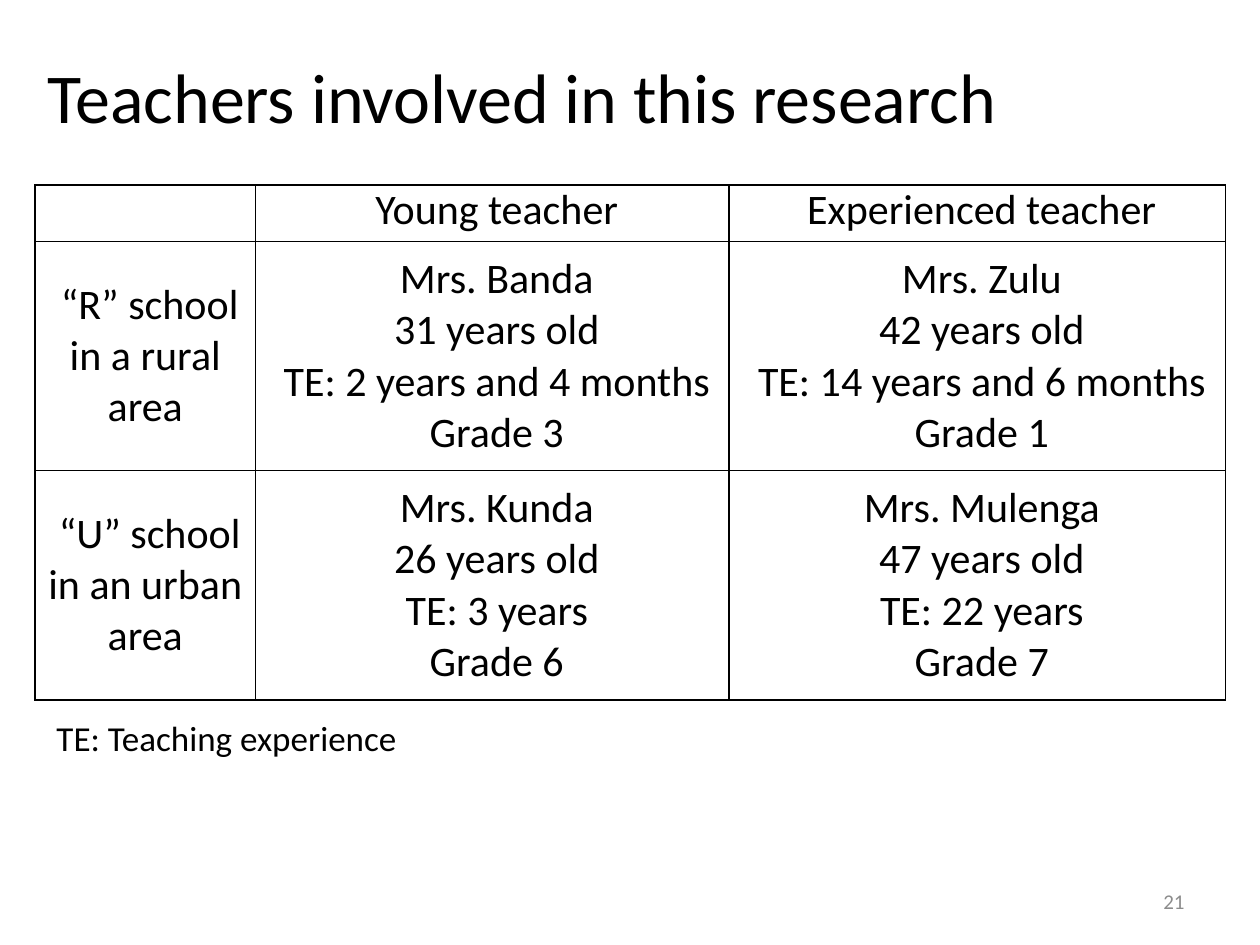
from lxml.etree import SubElement
from pptx import Presentation
from pptx.dml.color import RGBColor
from pptx.enum.text import MSO_ANCHOR as Anchor, PP_ALIGN as Align
from pptx.oxml.ns import qn
from pptx.util import Pt

BLACK, GREY = "000000", "8C8C8C"
COLUMN_WIDTHS = [126, 270.7, 283.7]
ROW_HEIGHTS = [32.4, 131, 131]
TEACHERS = [
    ["", "Young teacher", "Experienced teacher"],
    ["“R” school in a rural area",
     "Mrs. Banda\n31 years old\nTE: 2 years and 4 months\nGrade 3",
     "Mrs. Zulu\n42 years old\nTE: 14 years and 6 months\nGrade 1"],
    ["“U” school in an urban area",
     "Mrs. Kunda\n26 years old\nTE: 3 years\nGrade 6",
     "Mrs. Mulenga\n47 years old\nTE: 22 years\nGrade 7"],
]


def rgb(color):
    return RGBColor.from_string(color)


def format_paragraph(p, size, color=BLACK, align=Align.LEFT):
    p.alignment = align
    p.font.name = "Calibri"
    p.font.size = Pt(size)
    p.font.color.rgb = rgb(color)


def add_title(slide, text, left, top, width, height):
    sp = slide.shapes.title
    sp.left, sp.top, sp.width, sp.height = map(Pt, (left, top, width, height))
    tf = sp.text_frame
    tf.text = text
    tf.vertical_anchor = Anchor.MIDDLE
    format_paragraph(tf.paragraphs[0], 40)


def add_text(slide, text, left, top, width, height, size,
             color=BLACK, align=Align.LEFT, anchor=Anchor.TOP):
    sp = slide.shapes.add_textbox(*map(Pt, (left, top, width, height)))
    tf = sp.text_frame
    tf.word_wrap = True
    tf.vertical_anchor = anchor
    p = tf.paragraphs[0]
    p.text = text
    format_paragraph(p, size, color, align)
    return p


def set_borders(cell, color, width):
    """Draw all four edges; they must precede the fill in the cell properties."""
    props = cell._tc.get_or_add_tcPr()
    for i, edge in enumerate(("lnL", "lnR", "lnT", "lnB")):
        ln = SubElement(props, qn(f"a:{edge}"), w=str(Pt(width)))
        fill = SubElement(ln, qn("a:solidFill"))
        SubElement(fill, qn("a:srgbClr"), val=color)
        props.insert(i, ln)


def format_cell(cell, text, anchor):
    cell.margin_left = cell.margin_right = Pt(5)
    cell.margin_top = cell.margin_bottom = 0
    cell.vertical_anchor = anchor
    cell.fill.background()
    set_borders(cell, BLACK, 1)
    cell.text = text
    for p in cell.text_frame.paragraphs:
        format_paragraph(p, 24, align=Align.CENTER)
        p._p.get_or_add_pPr().set("indent", str(Pt(5)))


def add_teacher_table(slide, left, top):
    frame = slide.shapes.add_table(
        len(ROW_HEIGHTS), len(COLUMN_WIDTHS), Pt(left), Pt(top),
        Pt(sum(COLUMN_WIDTHS)), Pt(sum(ROW_HEIGHTS)))
    table = frame.table
    table.first_row = table.horz_banding = False
    for column, width in zip(table.columns, COLUMN_WIDTHS):
        column.width = Pt(width)
    for i, (row, height) in enumerate(zip(table.rows, ROW_HEIGHTS)):
        row.height = Pt(height)
        anchor = Anchor.MIDDLE if i else Anchor.TOP
        for cell, text in zip(row.cells, TEACHERS[i]):
            format_cell(cell, text, anchor)


def main():
    prs = Presentation()
    prs.slide_width, prs.slide_height = Pt(720), Pt(540)
    slide = prs.slides.add_slide(prs.slide_layouts[5])
    add_title(slide, "Teachers involved in this research", 20, 10, 677.5, 89.3)
    note = add_text(slide, "TE: Teaching experience", 25.2, 406, 674.6, 57, 20)
    note.space_before = Pt(4)
    add_text(slide, "21", 516, 500.5, 168, 28.75, 12, GREY, Align.RIGHT, Anchor.MIDDLE)
    add_teacher_table(slide, 20, 105.6)
    prs.save("out.pptx")


if __name__ == "__main__":
    main()
